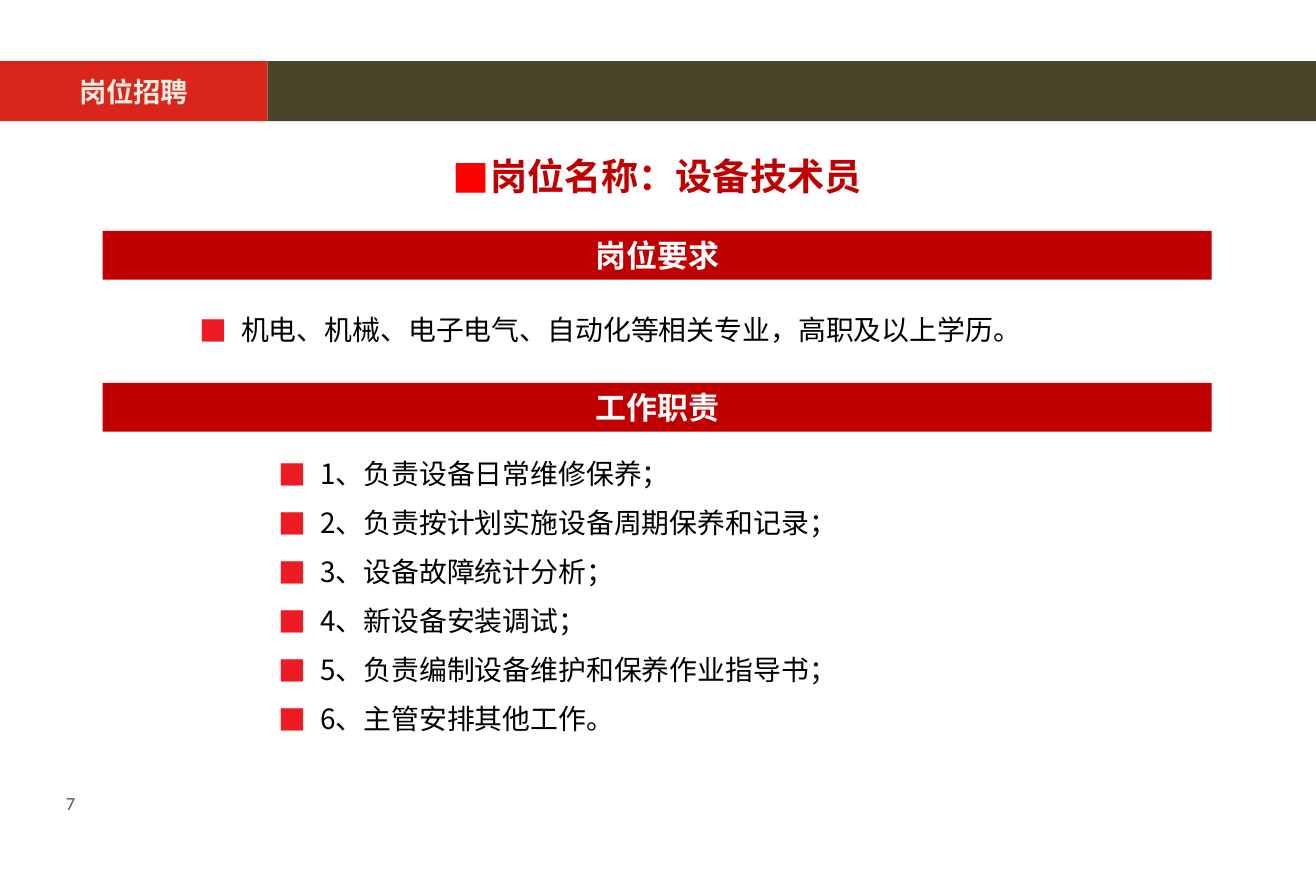
from lxml.etree import SubElement as Sub
from pptx import Presentation
from pptx.dml.color import RGBColor as RGB
from pptx.enum.shapes import MSO_SHAPE as Shape
from pptx.enum.text import MSO_ANCHOR as Anchor, PP_ALIGN as Align
from pptx.oxml.ns import qn
from pptx.util import Pt

HUES = {"red": "C00000", "tag": "DA251C", "olive": "4A452A", "cream": "EEECE1",
        "white": "FFFFFF", "black": "000000", "gray": "595959",
        "dot": "ED1C24", "bright": "FF0000"}
SANS = "Noto Sans CJK SC"

deck = Presentation()
deck.slide_width, deck.slide_height = Pt(850.4), Pt(573.8)
slide = deck.slides.add_slide(deck.slide_layouts[6])


def write(box, lines, size, hue, bold=False, face=SANS, dot=None, dent=0, **form):
    """Fill a box with paragraphs; form holds paragraph attributes."""
    frame = box.text_frame
    frame.word_wrap = True
    for i, line in enumerate(lines):
        para = frame.paragraphs[0] if i == 0 else frame.add_paragraph()
        if dot:
            props = para._p.get_or_add_pPr()
            props.set("marL", str(Pt(dent)))
            props.set("indent", str(-Pt(dent)))
            Sub(Sub(props, qn("a:buClr")), qn("a:srgbClr"), val=HUES[dot])
            Sub(props, qn("a:buFont"), typeface=SANS)
            Sub(props, qn("a:buChar"), char="■")
        for key, val in form.items():
            setattr(para, key, val)
        run = para.add_run()
        run.text = line
        for key, val in {"name": face, "size": Pt(size), "bold": bold}.items():
            setattr(run.font, key, val)
        run.font.color.rgb = RGB.from_string(HUES[hue])
        Sub(run._r.get_or_add_rPr(), qn("a:ea"), typeface=face)
    return frame


def block(left, top, width, height, hue):
    rect = slide.shapes.add_shape(Shape.RECTANGLE, Pt(left), Pt(top), Pt(width), Pt(height))
    rect.shadow.inherit = False
    rect.fill.solid()
    rect.fill.fore_color.rgb = RGB.from_string(HUES[hue])
    rect.line.fill.background()
    rect.text_frame.vertical_anchor = Anchor.MIDDLE
    return rect


# Header band
split = 172.8
block(split, 39.5, 850.4 - split, 38.8, "olive")
tag = block(0, 39.5, split, 38.8, "tag")
write(tag, ["岗位招聘"], 17.7, "cream", True, alignment=Align.CENTER)

# Job title
title = slide.shapes.add_textbox(Pt(66.4), Pt(87.1), Pt(716.6), Pt(41))
write(title, ["岗位名称：设备技术员"], 24, "red", True, dot="bright", dent=22.5,
      alignment=Align.CENTER, line_spacing=1.3)

# Sections: heading, bar top, list box, list lines
parts = [
    ("岗位要求", 149.2, (121.7, 198.7, 630.7, 28.8),
     ["机电、机械、电子电气、自动化等相关专业，高职及以上学历。"]),
    ("工作职责", 247.4, (172.8, 291.6, 547.2, 188.6),
     ["1、负责设备日常维修保养；",
      "2、负责按计划实施设备周期保养和记录；",
      "3、设备故障统计分析；",
      "4、新设备安装调试；",
      "5、负责编制设备维护和保养作业指导书；",
      "6、主管安排其他工作。"]),
]
for head, top, area, lines in parts:
    bar = block(66.4, top, 716.6, 31.5, "red")
    write(bar, [head], 20, "white", True, alignment=Align.CENTER)
    items = slide.shapes.add_textbox(*map(Pt, area))
    write(items, lines, 18, "black", dot="dot", dent=27,
          alignment=Align.JUSTIFY, space_after=Pt(10))

# Page number
page = slide.shapes.add_textbox(Pt(42.5), Pt(511.9), Pt(29.5), Pt(10.1))
frame = write(page, ["7"], 12, "gray", face="Calibri")
for side in ("left", "top", "right", "bottom"):
    setattr(frame, f"margin_{side}", 0)

deck.save("out.pptx")
